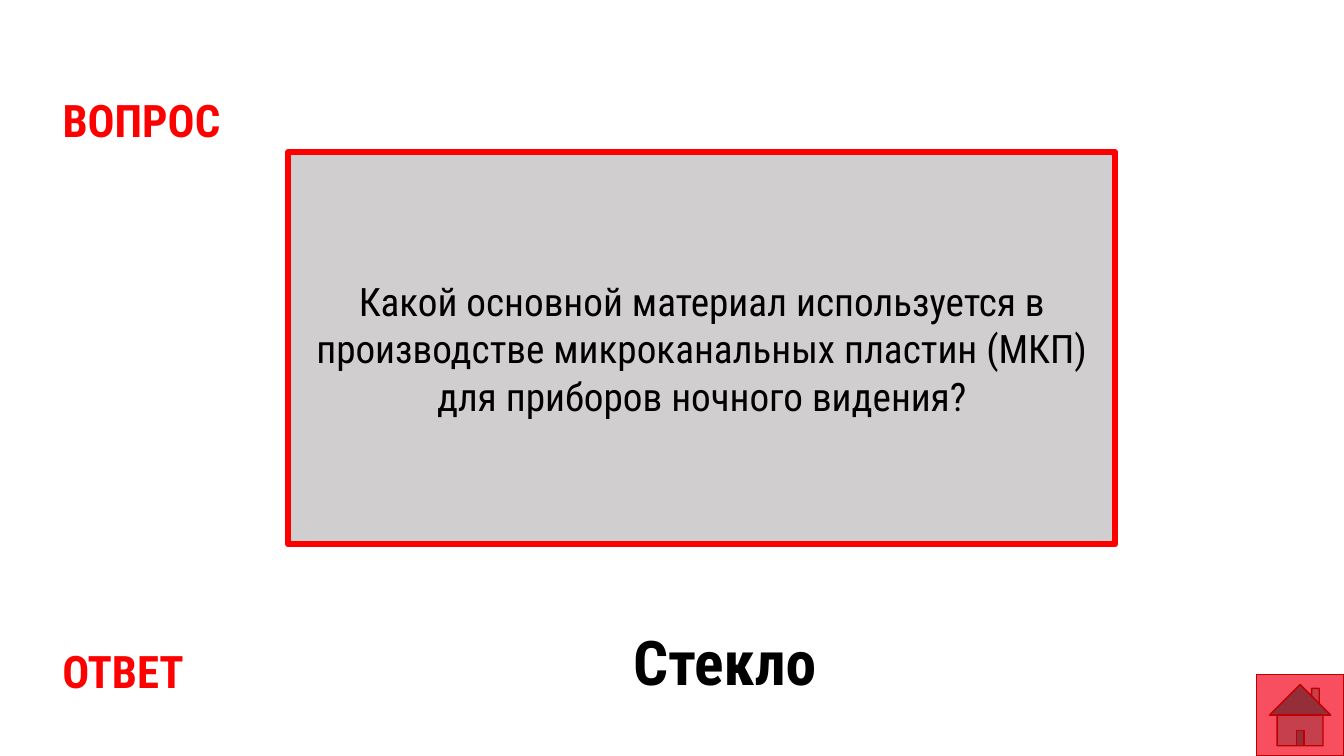
from dataclasses import dataclass

import pptx
import pptx.dml.color
import pptx.enum.shapes
import pptx.enum.text
import pptx.shapes.autoshape
import pptx.slide
import pptx.util

Inches = pptx.util.Inches
Shapes = pptx.enum.shapes.MSO_SHAPE
Align = pptx.enum.text.PP_ALIGN
Anchor = pptx.enum.text.MSO_ANCHOR

FONT = "Roboto Condensed"
COLORS = {
    "accent": "FF0000",
    "text": "000000",
    "card": "D0CECE",
    "button": "F74F5F",
    "button_line": "C00000",
}


@dataclass(frozen=True)
class Area:
    left: float
    top: float
    width: float
    height: float

    def lengths(self) -> tuple[int, int, int, int]:
        return (Inches(self.left), Inches(self.top),
                Inches(self.width), Inches(self.height))


@dataclass(frozen=True)
class Label:
    text: str
    area: Area
    size: int
    color: str
    bold: bool = True
    align: Align = Align.LEFT
    anchor: Anchor = Anchor.TOP


@dataclass(frozen=True)
class Panel:
    kind: Shapes
    area: Area
    fill: str
    line: str
    line_width: float


HEADING = Label("ВОПРОС", Area(0.52, 0.87, 5.18, 0.64), 32, "accent")
ANSWER_LABELS = [
    Label("ОТВЕТ", Area(0.52, 6.34, 1.65, 0.64), 32, "accent"),
    Label("Стекло", Area(6.18, 6.14, 5.18, 0.84), 44, "text"),
]
CARD = Panel(Shapes.RECTANGLE, Area(2.86, 1.51, 8.2, 3.89), "card", "accent", 4.5)
QUESTION = Label(
    "Какой основной материал используется в производстве "
    "микроканальных пластин (МКП) для приборов ночного видения?",
    CARD.area, 28, "text", bold=False, align=Align.CENTER, anchor=Anchor.MIDDLE,
)
HOME_BUTTON = Panel(Shapes.ACTION_BUTTON_HOME, Area(12.46, 6.69, 0.87, 0.81),
                    "button", "button_line", 1)


def rgb(name: str) -> pptx.dml.color.RGBColor:
    return pptx.dml.color.RGBColor.from_string(COLORS[name])


def write_label(box: pptx.shapes.autoshape.Shape, label: Label) -> None:
    frame = box.text_frame
    frame.text = label.text
    frame.word_wrap = True
    frame.auto_size = pptx.enum.text.MSO_AUTO_SIZE.NONE
    frame.vertical_anchor = label.anchor
    para = frame.paragraphs[0]
    para.alignment = label.align
    para.font.name = FONT
    para.font.size = pptx.util.Pt(label.size)
    para.font.bold = label.bold
    para.font.color.rgb = rgb(label.color)


def add_panel(page: pptx.slide.Slide, panel: Panel) -> pptx.shapes.autoshape.Shape:
    shape = page.shapes.add_shape(panel.kind, *panel.area.lengths())
    shape.shadow.inherit = False
    shape.fill.solid()
    shape.fill.fore_color.rgb = rgb(panel.fill)
    shape.line.color.rgb = rgb(panel.line)
    shape.line.width = pptx.util.Pt(panel.line_width)
    return shape


def main() -> None:
    deck = pptx.Presentation()
    deck.slide_width = Inches(13.33)
    deck.slide_height = Inches(7.5)
    page = deck.slides.add_slide(deck.slide_layouts.get_by_name("Title Only"))

    title = page.shapes.title
    title.left, title.top, title.width, title.height = HEADING.area.lengths()
    write_label(title, HEADING)

    write_label(add_panel(page, CARD), QUESTION)
    for label in ANSWER_LABELS:
        write_label(page.shapes.add_textbox(*label.area.lengths()), label)
    add_panel(page, HOME_BUTTON)

    deck.save("out.pptx")


if __name__ == "__main__":
    main()
